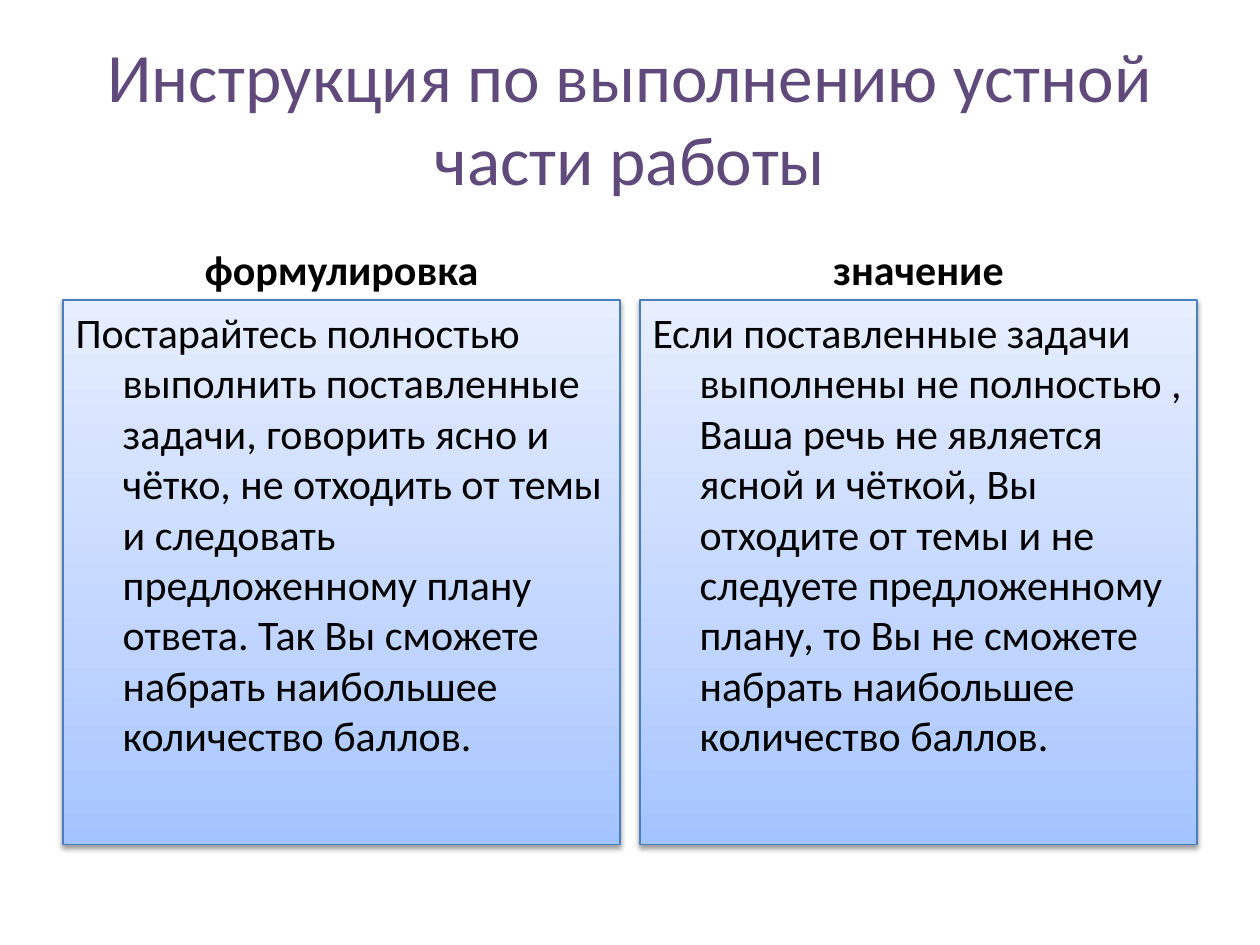
from copy import deepcopy
from dataclasses import dataclass

from lxml.etree import SubElement
from pptx import Presentation
from pptx.dml.color import RGBColor
from pptx.enum.text import MSO_ANCHOR, MSO_AUTO_SIZE, PP_ALIGN
from pptx.oxml.ns import qn
from pptx.util import Cm, Pt


@dataclass(frozen=True)
class Theme:
    """Colours, font and type sizes of the slide."""
    font: str = "Calibri"
    title_color: str = "604A7B"
    text_color: str = "000000"
    line_color: str = "4B7EBC"
    shadow_color: str = "000000"
    gradient: tuple = ((0, "A4C4FF"), (0.35, "BFD4FF"), (1, "E6EEFF"))
    title_size: float = 39.6
    body_size: float = 24


THEME = Theme()
MARGIN = 1.27
SLIDE_WIDTH = 25.4
COLUMN_WIDTH = 11.23
HANGING_INDENT = 0.95
COLUMNS = (
    ("формулировка",
     "Постарайтесь полностью выполнить поставленные задачи, говорить ясно и "
     "чётко, не отходить от темы и следовать предложенному плану ответа. "
     "Так Вы сможете набрать наибольшее количество баллов."),
    ("значение",
     "Если поставленные задачи выполнены не полностью , Ваша речь не является "
     "ясной и чёткой, Вы отходите от темы и не следуете предложенному плану, "
     "то Вы не сможете набрать наибольшее количество баллов."),
)


def place(shape, left, top, width, height):
    """Position a shape by lengths in centimetres."""
    shape.left, shape.top = Cm(left), Cm(top)
    shape.width, shape.height = Cm(width), Cm(height)


def write_text(shape, text, *, size=THEME.body_size, color=THEME.text_color,
               bold=False, align=PP_ALIGN.LEFT, anchor=MSO_ANCHOR.TOP, indent=0):
    """Fill a shape with one formatted paragraph without a bullet."""
    frame = shape.text_frame
    frame.text = text
    frame.word_wrap = True
    frame.auto_size = MSO_AUTO_SIZE.NONE
    frame.vertical_anchor = anchor
    paragraph = frame.paragraphs[0]
    paragraph.alignment = align
    font = paragraph.runs[0].font
    font.name, font.size, font.bold = THEME.font, Pt(size), bold
    font.color.rgb = RGBColor.from_string(color)
    properties = paragraph._p.get_or_add_pPr()
    properties.set("marL", str(Cm(indent)))
    properties.set("indent", str(-Cm(indent)))
    SubElement(properties, qn("a:buNone"))


def fill_gradient(shape):
    """Give a shape the theme's three-stop upward gradient."""
    shape.fill.gradient()
    shape.fill.gradient_angle = 90
    stop_list = next(shape.element.iter(qn("a:gsLst")))
    stop_list.append(deepcopy(stop_list[-1]))
    for stop, (position, color) in zip(shape.fill.gradient_stops, THEME.gradient):
        stop.position = position
        stop.color.rgb = RGBColor.from_string(color)


def add_shadow(shape):
    """Add a soft shadow just below a shape."""
    shape.shadow.inherit = False
    effects = next(shape.element.iter(qn("a:effectLst")))
    shadow = SubElement(effects, qn("a:outerShdw"), blurRad=str(Pt(3.1)),
                        dist=str(Pt(1.6)), dir="5400000", rotWithShape="0")
    color = SubElement(shadow, qn("a:srgbClr"), val=THEME.shadow_color)
    SubElement(color, qn("a:alpha"), val="38000")


def style_panel(shape):
    """Format a text placeholder as a shaded panel."""
    fill_gradient(shape)
    shape.line.color.rgb = RGBColor.from_string(THEME.line_color)
    shape.line.width = Pt(0.75)
    add_shadow(shape)


def build_column(heading, panel, left, heading_text, panel_text):
    """Lay out one heading with its panel below."""
    place(heading, left, 4.27, COLUMN_WIDTH, 1.78)
    write_text(heading, heading_text, bold=True, align=PP_ALIGN.CENTER,
               anchor=MSO_ANCHOR.BOTTOM)
    place(panel, left, 6.05, COLUMN_WIDTH, 10.97)
    style_panel(panel)
    write_text(panel, panel_text, indent=HANGING_INDENT)


def main():
    """Build and save the presentation."""
    presentation = Presentation()
    presentation.slide_width, presentation.slide_height = Cm(SLIDE_WIDTH), Cm(19.05)
    comparison_layout = presentation.slide_layouts[4]
    slide = presentation.slides.add_slide(comparison_layout)
    title, *bodies = slide.placeholders
    place(title, MARGIN, 0.76, SLIDE_WIDTH - 2 * MARGIN, 3.18)
    write_text(title, "Инструкция по выполнению устной части работы",
               size=THEME.title_size, color=THEME.title_color,
               align=PP_ALIGN.CENTER, anchor=MSO_ANCHOR.MIDDLE)
    lefts = (MARGIN, SLIDE_WIDTH - MARGIN - COLUMN_WIDTH)
    for heading, panel, left, texts in zip(bodies[::2], bodies[1::2], lefts, COLUMNS):
        build_column(heading, panel, left, *texts)
    presentation.save("out.pptx")


if __name__ == "__main__":
    main()
